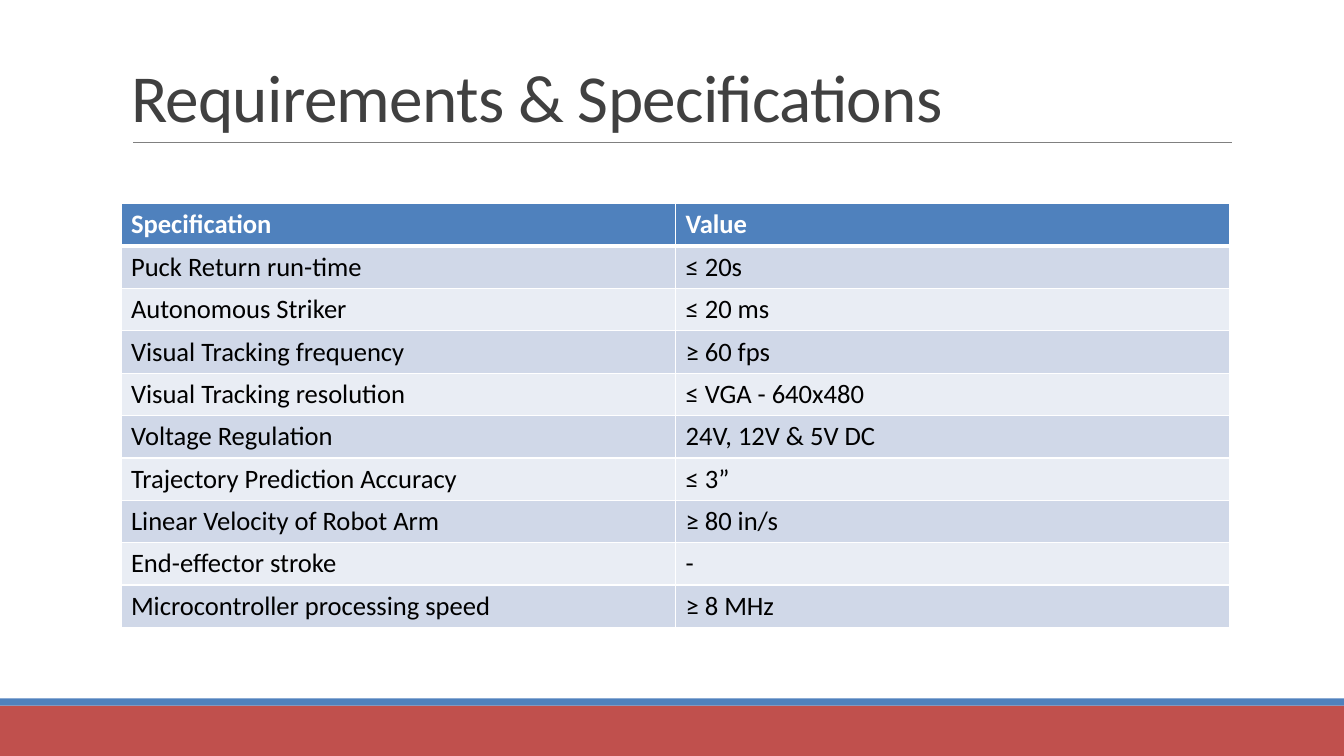
from pptx import Presentation
from pptx.dml.color import RGBColor
from pptx.enum.shapes import MSO_CONNECTOR, MSO_SHAPE
from pptx.enum.text import MSO_ANCHOR, MSO_AUTO_SIZE, PP_ALIGN
from pptx.oxml.ns import qn
from pptx.util import Pt
from lxml.etree import SubElement

PX = 9144  # EMU per px, 100 px to the inch
WIDE, HIGH = 1333, 750
FONT = "Calibri"
COLORS = {
    "white": "FFFFFF", "black": "000000", "title": "404040", "rule": "808080",
    "blue": "4F81BD", "red": "C0504D", "odd": "D0D8E8", "even": "E9EDF4",
}
SPECS = [
    ("Specification", "Value"),
    ("Puck Return run-time", "≤ 20s"),
    ("Autonomous Striker", "≤ 20 ms"),
    ("Visual Tracking frequency", "≥ 60 fps"),
    ("Visual Tracking resolution", "≤ VGA - 640x480"),
    ("Voltage Regulation", "24V, 12V & 5V DC"),
    ("Trajectory Prediction Accuracy", "≤ 3”"),
    ("Linear Velocity of Robot Arm", "≥ 80 in/s"),
    ("End-effector stroke", "-"),
    ("Microcontroller processing speed", "≥ 8 MHz"),
]


def color(name):
    return RGBColor.from_string(COLORS[name])


def emu(*sizes):
    return [size * PX for size in sizes]


def write(frame, text, size, ink, bold=False, track=None, lead=None):
    para = frame.paragraphs[0]
    para.alignment = PP_ALIGN.LEFT
    if lead:
        para.line_spacing = lead
    run = para.add_run()
    run.text = text
    run.font.name = FONT
    run.font.size = Pt(size)
    run.font.bold = bold
    run.font.color.rgb = color(ink)
    if track:
        run._r.get_or_add_rPr().set("spc", str(track))


def edge(cell, side, width):
    line = SubElement(cell._tc.get_or_add_tcPr(), qn("a:" + side), w=str(Pt(width)))
    fill = SubElement(line, qn("a:solidFill"))
    SubElement(fill, qn("a:srgbClr"), val=COLORS["white"])


def add_bar(slide, left, top, width, height, ink):
    bar = slide.shapes.add_shape(MSO_SHAPE.RECTANGLE, *emu(left, top, width, height))
    bar.shadow.inherit = False
    bar.fill.solid()
    bar.fill.fore_color.rgb = color(ink)
    bar.line.fill.background()


def add_footer(slide, left, top, width, height):
    strip = 7
    add_bar(slide, left, top + strip, width, height - strip, "red")
    add_bar(slide, left, top, width, strip, "blue")


def add_title(slide, left, top, width, height):
    # Heading
    title = slide.shapes.title
    title.left, title.top, title.width, title.height = emu(left, top, width, height)
    frame = title.text_frame
    frame.word_wrap = True
    frame.auto_size = MSO_AUTO_SIZE.NONE
    frame.vertical_anchor = MSO_ANCHOR.BOTTOM
    write(frame, "Requirements & Specifications", 48, "title", track=-50, lead=0.85)
    # Rule below it
    start, base = left + 12, top + height + 1
    rule = slide.shapes.add_connector(
        MSO_CONNECTOR.STRAIGHT, *emu(start, base, start + width - 10, base))
    rule.line.width = Pt(0.5)
    rule.line.color.rgb = color("rule")
    SubElement(rule._element.spPr, qn("a:effectLst"))


def add_specs(slide, left, top, width, height):
    table = slide.shapes.add_table(
        len(SPECS), 2, *emu(left, top, width, height)).table
    for r, specs in enumerate(SPECS):
        head = r == 0
        shade = "blue" if head else "odd" if r % 2 else "even"
        for c, text in enumerate(specs):
            cell = table.cell(r, c)
            write(cell.text_frame, text, 19, "white" if head else "black", bold=head)
            # Borders come before the fill in the cell's XML
            for side in ("lnL", "lnR", "lnT", "lnB"):
                thick = (head and side == "lnB") or (r == 1 and side == "lnT")
                edge(cell, side, 3 if thick else 1)
            cell.fill.solid()
            cell.fill.fore_color.rgb = color(shade)


def main():
    deck = Presentation()
    deck.slide_width, deck.slide_height = emu(WIDE, HIGH)
    slide = deck.slides.add_slide(deck.slide_layouts[5])
    add_footer(slide, 0, 693, WIDE, HIGH - 693)
    add_title(slide, 120, 31, 1100, 109)
    add_specs(slide, 120, 202, 1100, 420)
    deck.save("out.pptx")


if __name__ == "__main__":
    main()
